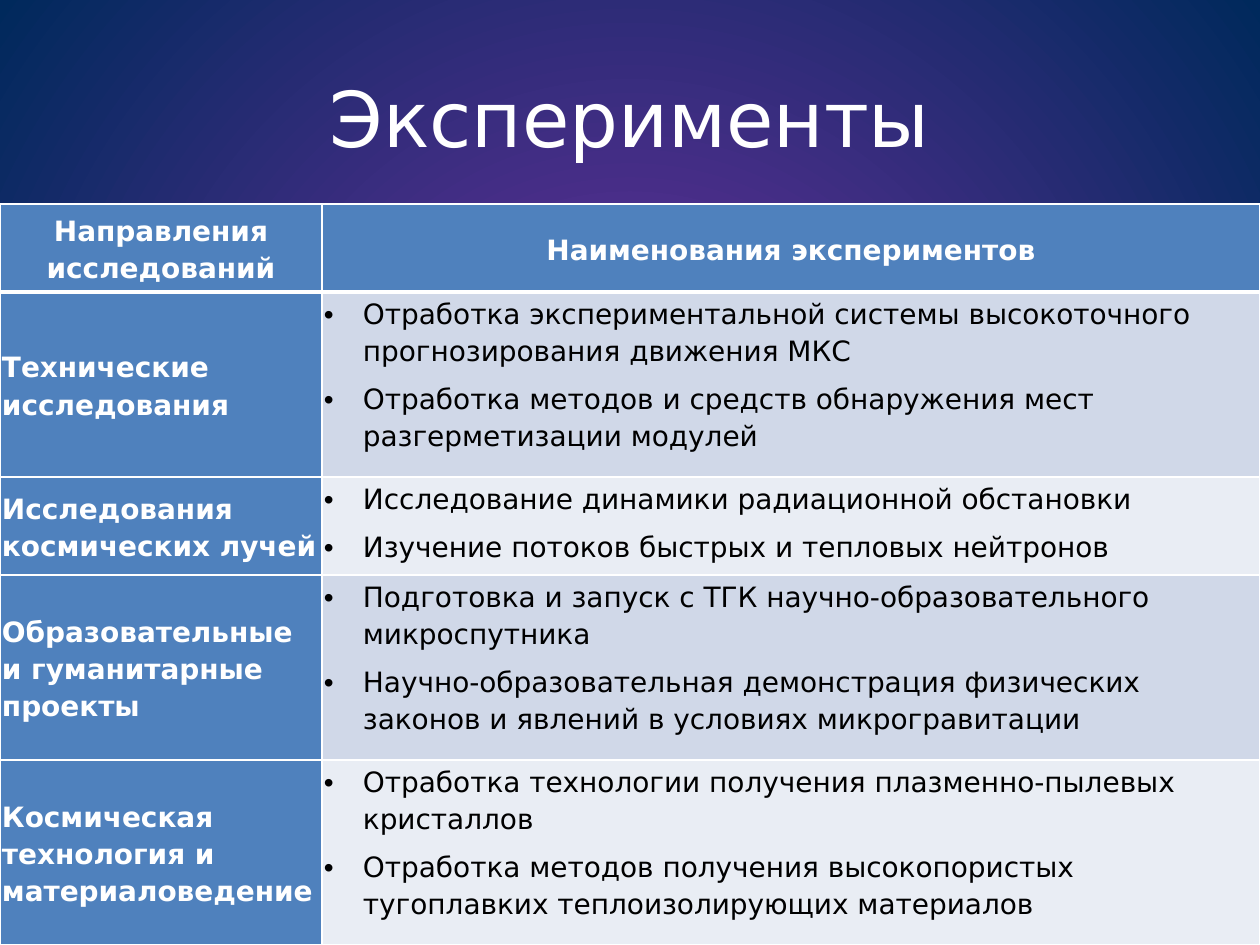
import pptx
import pptx.dml.color
import pptx.enum.text
import pptx.oxml
import pptx.oxml.ns
import pptx.util
from lxml import etree

TITLE = "Эксперименты"
HEADERS = ["Направления исследований", "Наименования экспериментов"]
DIRECTIONS = [
    ("Технические исследования", [
        "Отработка экспериментальной системы высокоточного прогнозирования движения МКС",
        "Отработка методов и средств обнаружения мест разгерметизации модулей",
    ]),
    ("Исследования космических лучей", [
        "Исследование динамики радиационной обстановки",
        "Изучение потоков быстрых и тепловых нейтронов",
    ]),
    ("Образовательные и гуманитарные проекты", [
        "Подготовка и запуск с ТГК научно-образовательного микроспутника",
        "Научно-образовательная демонстрация физических законов и явлений "
        "в условиях микрогравитации",
    ]),
    ("Космическая технология и материаловедение", [
        "Отработка технологии получения плазменно-пылевых кристаллов",
        "Отработка методов получения высокопористых тугоплавких "
        "теплоизолирующих материалов",
    ]),
]

COLORS = {
    "center": "7030A0", "edge": "00295C", "white": "FFFFFF", "black": "000000",
    "header": "4F81BD", "odd": "D0D8E8", "even": "E9EDF4",
}
FONT = "DejaVu Sans"
SLIDE_SIZE = (1260, 945)
TITLE_BOX = (63, 38, 1134, 158)
TABLE_TOP = 204
COLUMN_WIDTHS = [322, 938]
ROW_HEIGHTS = [88, 185, 98, 185, 185]
BULLET_INDENT = 39

ANCHOR = pptx.enum.text.MSO_ANCHOR
ALIGN = pptx.enum.text.PP_ALIGN


def px(length):
    return pptx.util.Emu(round(length * 914400 / 126))


def rgb(name):
    return pptx.dml.color.RGBColor.from_string(COLORS[name])


def set_font(paragraph, size, color, bold=False):
    font = paragraph.font
    font.name, font.size, font.bold = FONT, pptx.util.Pt(size), bold
    font.color.rgb = rgb(color)


def paint_background(slide):
    """Fill the background with a circular gradient from the centre."""
    fill = slide.background.fill
    fill.gradient()
    for stop, position, color in zip(fill.gradient_stops, (0, 1), ("center", "edge")):
        stop.position = position
        stop.color.rgb = rgb(color)
    linear = slide.element.find(".//" + pptx.oxml.ns.qn("a:lin"))
    linear.getparent().replace(linear, pptx.oxml.parse_xml(
        f'<a:path {pptx.oxml.ns.nsdecls("a")} path="circle">'
        '<a:fillToRect l="50000" t="50000" r="50000" b="50000"/></a:path>'))


def add_borders(cell, widths):
    """Draw white borders; widths gives points by side L, R, T, B."""
    properties = cell._tc.get_or_add_tcPr()
    for side, width in widths.items():
        properties.append(pptx.oxml.parse_xml(
            f'<a:ln{side} {pptx.oxml.ns.nsdecls("a")} w="{pptx.util.Pt(width)}">'
            f'<a:solidFill><a:srgbClr val="{COLORS["white"]}"/></a:solidFill></a:ln{side}>'))


def add_bullet(paragraph):
    properties = paragraph._p.get_or_add_pPr()
    properties.set("marL", str(px(BULLET_INDENT)))
    properties.set("indent", str(-px(BULLET_INDENT)))
    font = etree.SubElement(properties, pptx.oxml.ns.qn("a:buFont"))
    font.set("typeface", "Arial")
    bullet = etree.SubElement(properties, pptx.oxml.ns.qn("a:buChar"))
    bullet.set("char", "•")


def fill_cell(cell, lines, row, bulleted):
    is_header = row == 0
    add_borders(cell, {"L": 1, "R": 1, "T": 3 if row == 1 else 1, "B": 3 if is_header else 1})
    cell.fill.solid()
    body_color = "odd" if row % 2 else "even"
    cell.fill.fore_color.rgb = rgb(body_color if bulleted else "header")
    margin = px(1 if is_header else 2)
    cell.margin_left = cell.margin_right = cell.margin_top = cell.margin_bottom = margin
    cell.vertical_anchor = ANCHOR.TOP if bulleted else ANCHOR.MIDDLE
    cell.text_frame.text = "\n".join(lines)
    for paragraph in cell.text_frame.paragraphs:
        paragraph.alignment = ALIGN.CENTER if is_header else ALIGN.LEFT
        paragraph.line_spacing = 1.15
        if bulleted:
            paragraph.space_before = pptx.util.Pt(6)
            add_bullet(paragraph)
        set_font(paragraph, 16, "black" if bulleted else "white", bold=not bulleted)


def add_title(slide):
    frame = slide.shapes.add_textbox(*map(px, TITLE_BOX)).text_frame
    frame.word_wrap = True
    frame.vertical_anchor = ANCHOR.MIDDLE
    frame.text = TITLE
    paragraph = frame.paragraphs[0]
    paragraph.alignment = ALIGN.CENTER
    set_font(paragraph, 44, "white")


def add_experiments(slide):
    table = slide.shapes.add_table(
        len(ROW_HEIGHTS), len(COLUMN_WIDTHS), 0, px(TABLE_TOP),
        px(sum(COLUMN_WIDTHS)), px(sum(ROW_HEIGHTS))).table
    for column, width in zip(table.columns, COLUMN_WIDTHS):
        column.width = px(width)
    for table_row, height in zip(table.rows, ROW_HEIGHTS):
        table_row.height = px(height)
    for column, header in enumerate(HEADERS):
        fill_cell(table.cell(0, column), [header], 0, bulleted=False)
    for row, (direction, experiments) in enumerate(DIRECTIONS, start=1):
        fill_cell(table.cell(row, 0), [direction], row, bulleted=False)
        fill_cell(table.cell(row, 1), experiments, row, bulleted=True)


def main():
    presentation = pptx.Presentation()
    presentation.slide_width, presentation.slide_height = map(px, SLIDE_SIZE)
    slide = presentation.slides.add_slide(presentation.slide_layouts[6])
    paint_background(slide)
    add_title(slide)
    add_experiments(slide)
    presentation.save("out.pptx")


if __name__ == "__main__":
    main()
